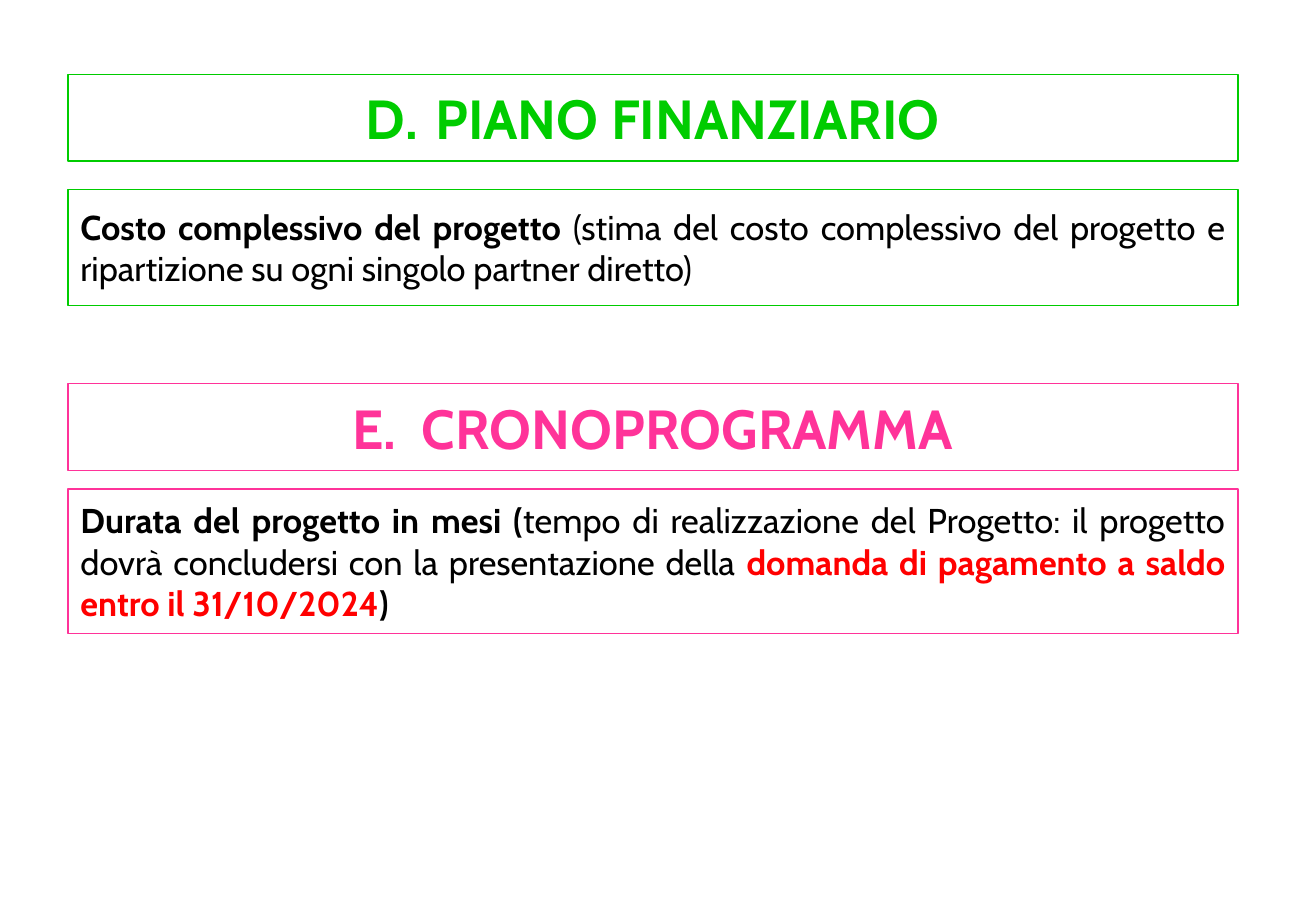
import pptx
import pptx.dml.color
import pptx.enum.shapes
import pptx.enum.text
import pptx.util
from lxml import etree

EMU_PER_PX = 9144  # 100 px to the inch
LEFT, WIDTH = 55, 945
HEADING_HEIGHT = 70
FONT = "Cabin"
GREEN, PINK, RED, BLACK = "00CC00", "FF3399", "FF0000", "000000"
ALIGN = pptx.enum.text.PP_ALIGN


def px(length):
    return pptx.util.Emu(length * EMU_PER_PX)


def color(hex_value):
    return pptx.dml.color.RGBColor.from_string(hex_value)


def frame_box(shape, top, height, line_color):
    """Place a shape, outline it and centre its text vertically."""
    shape.left, shape.top = px(LEFT), px(top)
    shape.width, shape.height = px(WIDTH), px(height)
    shape.fill.background()
    shape.line.color.rgb = color(line_color)
    shape.line.width = pptx.util.Pt(0.75)
    text_frame = shape.text_frame
    text_frame.word_wrap = True
    text_frame.auto_size = pptx.enum.text.MSO_AUTO_SIZE.NONE
    text_frame.vertical_anchor = pptx.enum.text.MSO_ANCHOR.MIDDLE


def set_bullet(paragraph, tag, indent, **attributes):
    properties = paragraph._p.get_or_add_pPr()
    properties.set("marL", str(px(indent)))
    properties.set("indent", str(px(-indent)))
    etree.SubElement(properties, pptx.oxml.ns.qn(tag), attributes)


def add_run(paragraph, text, size, text_color, bold):
    run = paragraph.add_run()
    run.text = text
    run.font.name = FONT
    run.font.size = pptx.util.Pt(size)
    run.font.bold = bold
    run.font.color.rgb = color(text_color)


def fill_heading(shape, top, text, number, heading_color):
    frame_box(shape, top, HEADING_HEIGHT, heading_color)
    paragraph = shape.text_frame.paragraphs[0]
    paragraph.alignment = ALIGN.CENTER
    set_bullet(paragraph, "a:buAutoNum", 56,
               type="alphaUcPeriod", startAt=str(number))
    add_run(paragraph, text, 32, heading_color, True)


def fill_description(shape, top, height, line_color, runs):
    frame_box(shape, top, height, line_color)
    paragraph = shape.text_frame.paragraphs[0]
    paragraph.alignment = ALIGN.JUSTIFY
    paragraph.space_before = pptx.util.Pt(0)
    set_bullet(paragraph, "a:buNone", 0)
    for text, text_color, bold in runs:
        add_run(paragraph, text, 20, text_color, bold)


def main():
    presentation = pptx.Presentation()
    presentation.slide_width, presentation.slide_height = px(1063), px(744)
    two_content_layout = presentation.slide_layouts[3]
    slide = presentation.slides.add_slide(two_content_layout)
    cost_box, duration_box = slide.placeholders[1], slide.placeholders[2]

    fill_heading(slide.shapes.title, 60, "PIANO FINANZIARIO", 4, GREEN)
    fill_description(cost_box, 153, 94, GREEN, [
        ("Costo complessivo del progetto ", BLACK, True),
        ("(stima del costo complessivo del progetto e ripartizione "
         "su ogni singolo partner diretto)", BLACK, False),
    ])

    schedule_heading = slide.shapes.add_shape(
        pptx.enum.shapes.MSO_SHAPE.RECTANGLE,
        px(LEFT), px(310), px(WIDTH), px(HEADING_HEIGHT))
    schedule_heading.shadow.inherit = False
    fill_heading(schedule_heading, 310, "CRONOPROGRAMMA", 5, PINK)
    fill_description(duration_box, 395, 117, PINK, [
        ("Durata del progetto in mesi (", BLACK, True),
        ("tempo di realizzazione del Progetto: il progetto dovrà "
         "concludersi con la presentazione della ", BLACK, False),
        ("domanda di pagamento a saldo entro il 31/10/2024", RED, True),
        (")", BLACK, True),
    ])
    presentation.save("out.pptx")


if __name__ == "__main__":
    main()
